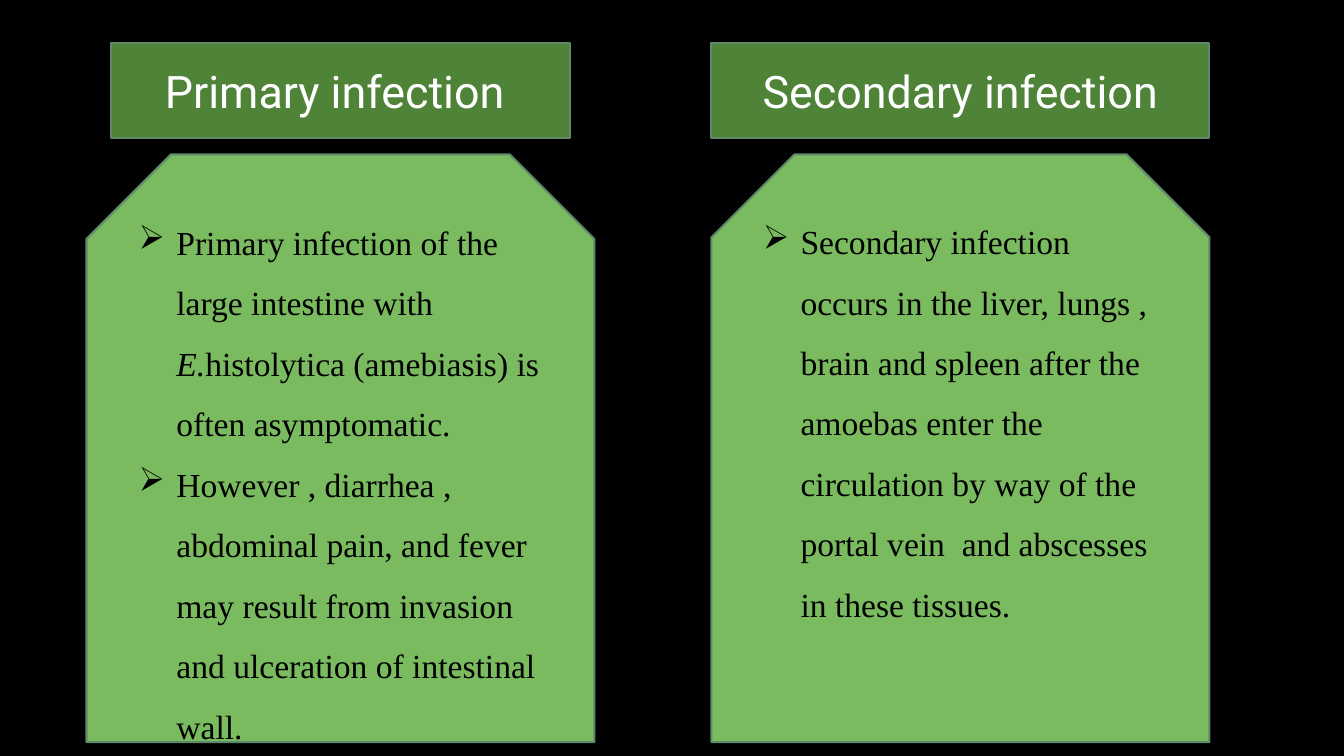
from dataclasses import dataclass

from lxml.etree import SubElement
from pptx import Presentation
from pptx.dml.color import RGBColor
from pptx.enum.shapes import MSO_SHAPE as Preset
from pptx.enum.text import MSO_ANCHOR as Anchor, PP_ALIGN as Align
from pptx.oxml.ns import qn
from pptx.util import Cm, Pt


@dataclass(frozen=True)
class Theme:
    background: RGBColor = RGBColor(0x00, 0x00, 0x00)
    heading_fill: RGBColor = RGBColor(0x4F, 0x84, 0x38)
    panel_fill: RGBColor = RGBColor(0x7A, 0xBB, 0x5F)
    outline: RGBColor = RGBColor(0x5F, 0x89, 0x6C)
    heading_text: RGBColor = RGBColor(0xFF, 0xFF, 0xFF)
    panel_text: RGBColor = RGBColor(0x00, 0x00, 0x00)
    heading_font: str = "Roboto"
    panel_font: str = "Times New Roman"
    heading_size: Pt = Pt(32)
    panel_size: Pt = Pt(24)
    outline_width: Pt = Pt(1.5)


THEME = Theme()

# Rows shared by both columns
HEADING_TOP, HEADING_HEIGHT = Cm(1.09), Cm(2.39)
PANEL_TOP, PANEL_HEIGHT = Cm(3.89), Cm(14.81)
BULLET_INDENT = Cm(0.95)

# Each paragraph is a list of (text, italic) runs
PRIMARY_POINTS = [
    [
        ("Primary infection of the large intestine with ", False),
        ("E.", True),
        ("histolytica (amebiasis) is often asymptomatic.", False),
    ],
    [("However , diarrhea , abdominal pain, and fever may result from "
      "invasion and ulceration of intestinal wall.", False)],
]
SECONDARY_POINTS = [
    [("Secondary infection occurs in the liver, lungs , brain and spleen "
      "after the amoebas enter the circulation by way of the portal vein  "
      "and abscesses in these tissues.", False)],
]


def add_box(slide, preset, left, top, width, height, fill):
    shape = slide.shapes.add_shape(preset, left, top, width, height)
    shape.shadow.inherit = False
    shape.fill.solid()
    shape.fill.fore_color.rgb = fill
    shape.line.color.rgb = THEME.outline
    shape.line.width = THEME.outline_width
    shape.text_frame.word_wrap = True
    return shape


def set_font(paragraph, name, size, color):
    paragraph.font.name = name
    paragraph.font.size = size
    paragraph.font.color.rgb = color


def add_bullet(paragraph):
    properties = paragraph._p.get_or_add_pPr()
    properties.set("marL", str(BULLET_INDENT))
    properties.set("indent", str(-BULLET_INDENT))
    SubElement(properties, qn("a:buChar"), char="➢")


def add_heading(slide, text, left, width):
    shape = add_box(slide, Preset.RECTANGLE, left, HEADING_TOP, width,
                    HEADING_HEIGHT, THEME.heading_fill)
    shape.text_frame.vertical_anchor = Anchor.MIDDLE
    paragraph = shape.text_frame.paragraphs[0]
    paragraph.text = text
    paragraph.alignment = Align.CENTER
    set_font(paragraph, THEME.heading_font, THEME.heading_size,
             THEME.heading_text)


def add_panel(slide, points, left, width):
    shape = add_box(slide, Preset.SNIP_2_SAME_RECTANGLE, left, PANEL_TOP,
                    width, PANEL_HEIGHT, THEME.panel_fill)
    frame = shape.text_frame
    frame.vertical_anchor = Anchor.TOP
    for index, runs in enumerate(points):
        paragraph = frame.add_paragraph() if index else frame.paragraphs[0]
        add_bullet(paragraph)
        paragraph.alignment = Align.LEFT
        paragraph.line_spacing = 1.5
        set_font(paragraph, THEME.panel_font, THEME.panel_size,
                 THEME.panel_text)
        for text, italic in runs:
            run = paragraph.add_run()
            run.text = text
            if italic:
                run.font.italic = True


def main():
    presentation = Presentation()
    presentation.slide_width = Cm(33.87)
    presentation.slide_height = Cm(19.05)
    slide = presentation.slides.add_slide(presentation.slide_layouts[6])
    slide.background.fill.solid()
    slide.background.fill.fore_color.rgb = THEME.background

    # Primary column
    add_heading(slide, "Primary infection ", Cm(2.79), Cm(11.58))
    add_panel(slide, PRIMARY_POINTS, Cm(2.18), Cm(12.8))

    # Secondary column
    add_heading(slide, "Secondary infection", Cm(17.93), Cm(12.55))
    add_panel(slide, SECONDARY_POINTS, Cm(17.93), Cm(12.55))

    presentation.save("out.pptx")


if __name__ == "__main__":
    main()
